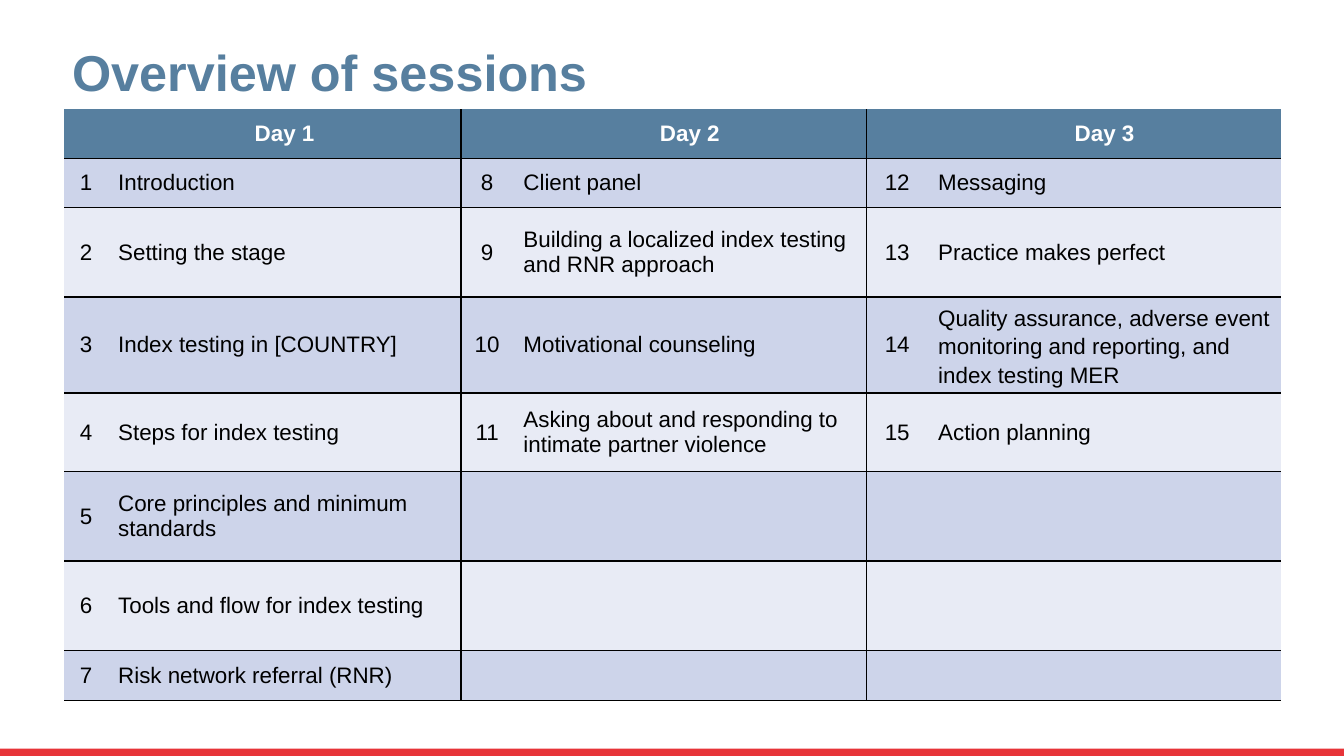
from itertools import count

from lxml import etree
from pptx import Presentation
from pptx import util as u
from pptx.dml.color import RGBColor
from pptx.enum import shapes, text
from pptx.oxml.ns import qn

PX = 9525
STEEL = RGBColor(0x57, 0x7F, 0x9F)
RED = RGBColor(0xE7, 0x34, 0x39)
BAND_DARK = RGBColor(0xCD, 0xD4, 0xEA)
BAND_LIGHT = RGBColor(0xE8, 0xEB, 0xF5)
BLACK = RGBColor(0, 0, 0)
WHITE = RGBColor(255, 255, 255)

DAYS = {
    "Day 1": [
        "Introduction",
        "Setting the stage",
        "Index testing in [COUNTRY]",
        "Steps for index testing",
        "Core principles and minimum standards",
        "Tools and flow for index testing",
        "Risk network referral (RNR)",
    ],
    "Day 2": [
        "Client panel",
        "Building a localized index testing and RNR approach",
        "Motivational counseling",
        "Asking about and responding to intimate partner violence",
    ],
    "Day 3": [
        "Messaging",
        "Practice makes perfect",
        "Quality assurance, adverse event monitoring and reporting, and index testing MER",
        "Action planning",
    ],
}
NUMBER_WIDTHS = [42, 50, 59]
SESSION_WIDTH = 336
ROW_HEIGHTS = [47, 47, 85, 91, 75, 85, 85, 48]
LOOSE_SPACING = {14: 1.15}


class SlideBuilder:
    font = "Arial"

    def __init__(self, deck):
        self.slide = deck.slides.add_slide(deck.slide_layouts[5])

    def place(self, item, left, top, width, height):
        values = {"left": left, "top": top, "width": width, "height": height}
        for name, value in values.items():
            setattr(item, name, value * PX)

    def add_words(self, frame, words, color, size, bold=False,
                  align=text.PP_ALIGN.LEFT, spacing=None):
        para = frame.paragraphs[0]
        para.alignment = align
        para.line_spacing = spacing
        span = para.add_run()
        span.text = words
        for name, value in {"name": self.font, "size": u.Pt(size), "bold": bold}.items():
            setattr(span.font, name, value)
        span.font.color.rgb = color

    def title(self, words, *bounds):
        box = self.slide.shapes.title
        self.place(box, *bounds)
        frame = box.text_frame
        frame.auto_size = text.MSO_AUTO_SIZE.NONE
        frame.vertical_anchor = text.MSO_ANCHOR.MIDDLE
        self.add_words(frame, words, STEEL, 36, bold=True, spacing=0.9)

    def bar(self, color, *bounds):
        bar = self.slide.shapes.add_shape(
            shapes.MSO_SHAPE.RECTANGLE, *(value * PX for value in bounds))
        bar.shadow.inherit = False
        bar.fill.solid()
        bar.fill.fore_color.rgb = color
        bar.line.fill.background()

    def border(self, cell, sides):
        properties = cell._tc.get_or_add_tcPr()
        for side in "LRTB":
            line = etree.SubElement(properties, qn(f"a:ln{side}"), w=str(u.Pt(1)))
            if side in sides:
                fill = etree.SubElement(line, qn("a:solidFill"))
                etree.SubElement(fill, qn("a:srgbClr"), val=str(BLACK))
            else:
                etree.SubElement(line, qn("a:noFill"))

    def table(self, left, top, widths, heights):
        bounds = (left, top, sum(widths), sum(heights))
        table = self.slide.shapes.add_table(
            len(heights), len(widths), *(value * PX for value in bounds)).table
        table.horz_banding = False
        for column, width in zip(table.columns, widths):
            column.width = width * PX
        for row, height in zip(table.rows, heights):
            row.height = height * PX
        return table

    def style_cells(self, table):
        last = len(table.columns) - 1
        for row_index, row in enumerate(table.rows):
            band = BAND_DARK if row_index % 2 else BAND_LIGHT
            for column_index, cell in enumerate(row.cells):
                sides = "TB" if row_index else "B"
                if column_index % 2 and column_index < last:
                    sides += "R"
                elif column_index and column_index % 2 == 0:
                    sides += "L"
                self.border(cell, sides)
                cell.fill.solid()
                cell.fill.fore_color.rgb = band if row_index else STEEL
                cell.vertical_anchor = text.MSO_ANCHOR.MIDDLE

    def agenda(self, left, top):
        widths = [width for number in NUMBER_WIDTHS for width in (number, SESSION_WIDTH)]
        table = self.table(left, top, widths, ROW_HEIGHTS)
        self.style_cells(table)
        center = text.PP_ALIGN.CENTER
        numbers = count(1)
        for day_index, (day, sessions) in enumerate(DAYS.items()):
            column = day_index * 2
            self.add_words(table.cell(0, column + 1).text_frame, day, WHITE, 16, True, center)
            for row, session in enumerate(sessions, 1):
                number = next(numbers)
                self.add_words(table.cell(row, column).text_frame, str(number), BLACK, 16,
                               align=center)
                self.add_words(table.cell(row, column + 1).text_frame, session, BLACK, 16,
                               spacing=LOOSE_SPACING.get(number))


def main():
    deck = Presentation()
    deck.slide_width, deck.slide_height = 1280 * PX, 720 * PX
    page = SlideBuilder(deck)
    page.bar(RED, 0, 713, 1280, 7)
    page.title("Overview of sessions", 59, 30, 1104, 84)
    page.agenda(61, 104)
    deck.save("out.pptx")


if __name__ == "__main__":
    main()
